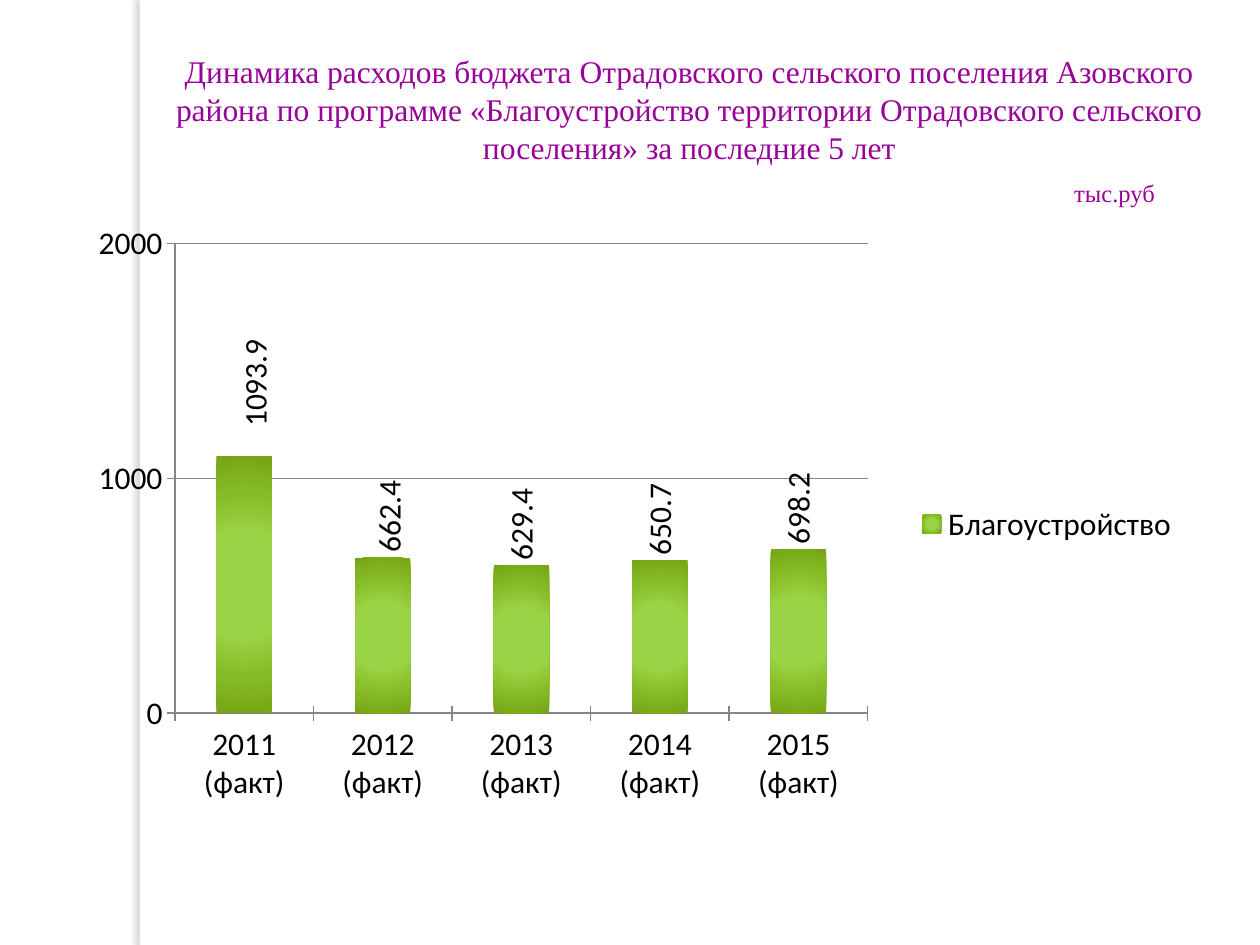
from dataclasses import dataclass

from lxml.etree import SubElement
from pptx import Presentation
from pptx.chart.data import CategoryChartData
from pptx.dml.color import RGBColor
from pptx.enum.chart import XL_CHART_TYPE as ChartType
from pptx.enum.chart import XL_LABEL_POSITION as LabelPosition
from pptx.enum.chart import XL_LEGEND_POSITION as LegendPosition
from pptx.enum.chart import XL_TICK_MARK as TickMark
from pptx.enum.shapes import MSO_SHAPE as ShapeKind
from pptx.enum.text import PP_ALIGN as Align
from pptx.oxml import parse_xml
from pptx.oxml.ns import nsdecls, qn
from pptx.util import Pt


@dataclass(frozen=True)
class Theme:
    title_font: str = "Times New Roman"
    chart_font: str = "Calibri"
    title_size: float = 18
    unit_size: float = 14
    chart_size: float = 18
    purple: str = "990099"
    black: str = "000000"
    white: str = "FFFFFF"
    axis: str = "868686"
    shadow: str = "736F63"
    bar_center: str = "9BD346"
    bar_middle: str = "86BC25"
    bar_edge: str = "77A515"


@dataclass(frozen=True)
class Box:
    left: float
    top: float
    width: float
    height: float

    def lengths(self) -> tuple:
        return Pt(self.left), Pt(self.top), Pt(self.width), Pt(self.height)


@dataclass(frozen=True)
class Year:
    label: str
    expense: float
    label_shift: tuple = ()


THEME = Theme()
YEARS = [
    Year("2011 (факт)", 1093.9, (0.01, -0.04)),
    Year("2012 (факт)", 662.4, (0.006, 0)),
    Year("2013 (факт)", 629.4),
    Year("2014 (факт)", 650.7),
    Year("2015 (факт)", 698.2),
]


def add_text(slide, box: Box, text: str, *, size: float, align, line_spacing=None) -> None:
    frame = slide.shapes.add_textbox(*box.lengths()).text_frame
    frame.word_wrap = True
    paragraph = frame.paragraphs[0]
    paragraph.alignment = align
    if line_spacing:
        paragraph.line_spacing = Pt(line_spacing)
    run = paragraph.add_run()
    run.text = text
    run.font.size = Pt(size)
    run.font.name = THEME.title_font
    run.font.color.rgb = RGBColor.from_string(THEME.purple)


def add_strip(slide, box: Box) -> None:
    shape = slide.shapes.add_shape(ShapeKind.RECTANGLE, *box.lengths())
    shape.fill.solid()
    shape.fill.fore_color.rgb = RGBColor.from_string(THEME.white)
    shape.line.fill.background()
    shape.shadow.inherit = False
    effects = shape._element.spPr.find(qn("a:effectLst"))
    effects.append(parse_xml(
        f'<a:outerShdw {nsdecls("a")} blurRad="{Pt(3)}" dist="{Pt(3)}" dir="10800000">'
        f'<a:srgbClr val="{THEME.shadow}"><a:alpha val="25000"/></a:srgbClr></a:outerShdw>'))


def style_axis(axis) -> None:
    axis.major_tick_mark = TickMark.CROSS
    axis.minor_tick_mark = TickMark.NONE
    axis.format.line.color.rgb = RGBColor.from_string(THEME.axis)
    axis.format.line.width = Pt(0.75)


def set_layout(parent, index: int, **values) -> None:
    """Place a chart part by hand; values are fractions of the chart."""
    for old in parent.findall(qn("c:layout")):
        parent.remove(old)
    layout = parent.makeelement(qn("c:layout"))
    manual = SubElement(layout, qn("c:manualLayout"))
    for name, value in values.items():
        SubElement(manual, qn(f"c:{name}")).set("val", str(value))
    parent.insert(index, layout)


def fill_radial(series) -> None:
    stops = [(0, THEME.bar_center), (40, THEME.bar_center),
             (70, THEME.bar_middle), (100, THEME.bar_edge)]
    stop_xml = "".join(
        f'<a:gs pos="{position * 1000}"><a:srgbClr val="{color}"/></a:gs>'
        for position, color in stops)
    series.format.line.fill.background()
    series._element.get_or_add_spPr().insert(0, parse_xml(
        f'<a:gradFill {nsdecls("a")} rotWithShape="1"><a:gsLst>{stop_xml}</a:gsLst>'
        '<a:path path="circle"><a:fillToRect l="50000" t="50000" r="50000" b="50000"/>'
        '</a:path></a:gradFill>'))


def add_labels(plot, series) -> None:
    labels = series.data_labels
    labels.show_value = True
    labels.position = LabelPosition.OUTSIDE_END
    labels.font.size = Pt(THEME.chart_size)
    rotation = labels._element.find(qn("c:txPr")).find(qn("a:bodyPr"))
    rotation.set("rot", "-5400000")
    rotation.set("vert", "horz")
    for index, year in enumerate(YEARS):
        if not year.label_shift:
            continue
        label = series.points[index].data_label
        label.font.size = Pt(THEME.chart_size)
        label.position = LabelPosition.OUTSIDE_END
        element = labels._element.findall(qn("c:dLbl"))[index]
        body = element.find(qn("c:txPr")).find(qn("a:bodyPr"))
        body.set("rot", "-5400000")
        body.set("vert", "horz")
        x, y = year.label_shift
        set_layout(element, 1, x=x, y=y)


def add_expense_chart(slide, box: Box) -> None:
    data = CategoryChartData()
    data.categories = [year.label for year in YEARS]
    data.add_series("Благоустройство", [year.expense for year in YEARS])
    chart = slide.shapes.add_chart(ChartType.COLUMN_CLUSTERED, *box.lengths(), data).chart
    chart.has_title = False
    chart.font.name = THEME.chart_font
    chart.font.size = Pt(THEME.chart_size)
    chart.font.color.rgb = RGBColor.from_string(THEME.black)

    # Axes
    style_axis(chart.category_axis)
    values = chart.value_axis
    style_axis(values)
    values.minimum_scale, values.maximum_scale, values.major_unit = 0, 2000, 1000
    values.has_major_gridlines = True
    grid = values.major_gridlines.format.line
    grid.color.rgb = RGBColor.from_string(THEME.axis)
    grid.width = Pt(0.75)

    # Columns
    plot = chart.plots[0]
    plot.gap_width = 150
    plot.vary_by_categories = False
    series = plot.series[0]
    fill_radial(series)
    add_labels(plot, series)

    # Legend and plot area
    chart.has_legend = True
    chart.legend.position = LegendPosition.RIGHT
    chart.legend.include_in_layout = False
    plot_area = chart._chartSpace.chart.plotArea
    set_layout(plot_area, 0, layoutTarget="inner", xMode="edge", yMode="edge",
               x=0.09, y=0.04, w=0.62, h=0.77)


def main() -> None:
    presentation = Presentation()
    presentation.slide_width, presentation.slide_height = Pt(720), Pt(540)
    slide = presentation.slides.add_slide(presentation.slide_layouts[6])

    # Side strip
    add_strip(slide, Box(80, 0, 5.5, 540))

    # Title and unit
    add_text(slide, Box(93.5, 26, 601, 72),
             "Динамика расходов бюджета Отрадовского сельского поселения Азовского "
             "района по программе «Благоустройство территории Отрадовского сельского "
             "поселения» за последние 5 лет",
             size=THEME.title_size, align=Align.CENTER, line_spacing=21.7)
    add_text(slide, Box(567, 98, 100, 24), "тыс.руб",
             size=THEME.unit_size, align=Align.RIGHT)

    # Expenses by year
    add_expense_chart(slide, Box(42.5, 125.3, 638.6, 348.5))
    presentation.save("out.pptx")


if __name__ == "__main__":
    main()
